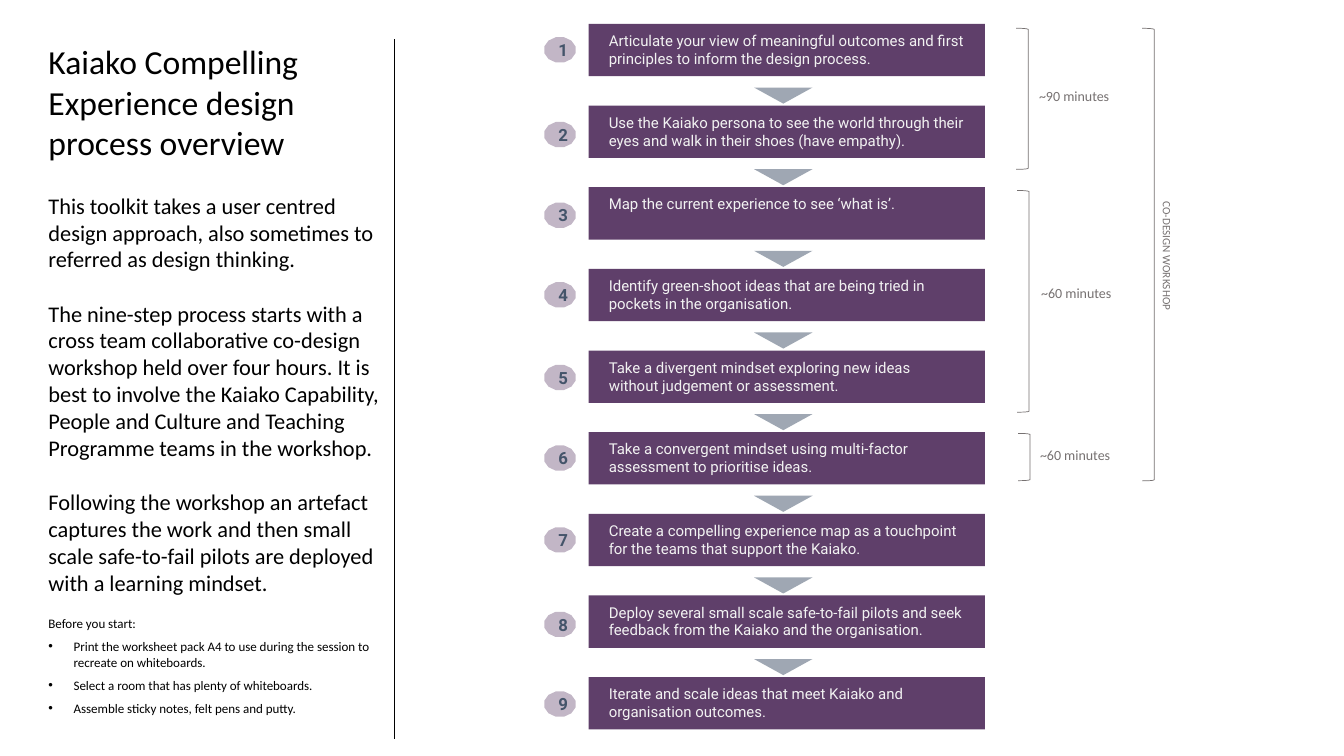
from dataclasses import dataclass
from typing import Any

from lxml.etree import SubElement
from pptx import Presentation
from pptx.dml.color import RGBColor
from pptx.enum.shapes import MSO_CONNECTOR, MSO_SHAPE as Preset
from pptx.enum.text import MSO_ANCHOR as Anchor, MSO_AUTO_SIZE as AutoSize, PP_ALIGN as Align
from pptx.oxml.ns import qn
from pptx.util import Pt

BLACK = RGBColor(0x00, 0x00, 0x00)
PURPLE = RGBColor(0x30, 0x06, 0x3E)
SLATE = RGBColor(0x44, 0x54, 0x6A)
GREY = RGBColor(0x76, 0x71, 0x71)
PALE = RGBColor(0xF2, 0xF2, 0xF2)

STEP_LEFT, STEP_TOP, STEP_WIDTH, STEP_HEIGHT = 420.5, 17.1, 283, 37.4
STEP_PITCH = 58.32
ARROW_LEFT, ARROW_DROP, ARROW_WIDTH, ARROW_HEIGHT = 538.6, 45.4, 41.8, 11.5
BADGE_LEFT, BADGE_WIDTH, BADGE_HEIGHT = 388.8, 22.3, 18
NO_INSETS = dict(margin_left=0, margin_right=0, margin_top=0, margin_bottom=0)


@dataclass
class Step:
    text: str
    badge_top: float
    right_inset: float = 7


@dataclass
class Bracket:
    left: float
    top: float
    height: float


@dataclass
class Label:
    text: str
    left: float
    top: float
    width: float
    height: float
    size: float = 10
    rotation: float = 0
    align: Align = Align.LEFT


@dataclass
class Paragraph:
    text: str
    size: float = 16
    before: float = 0
    after: float = 0
    bullet: bool = False


STEPS = [
    Step("Articulate your view of meaningful outcomes and first principles to inform the design process.", 26.6),
    Step("Use the Kaiako persona to see the world through their eyes and walk in their shoes (have empathy).", 87.1),
    Step("Map the current experience to see ‘what is’.", 144.7),
    Step("Identify green-shoot ideas that are being tried in pockets in the organisation.", 201.6, 20),
    Step("Take a divergent mindset exploring new ideas without judgement or assessment.", 260.6, 20),
    Step("Take a convergent mindset using multi-factor assessment to prioritise ideas.", 318.2, 20),
    Step("Create a compelling experience map as a touchpoint for the teams that support the Kaiako.", 376.6),
    Step("Deploy several small scale safe-to-fail pilots and seek feedback from the Kaiako and the organisation.", 437),
    Step("Iterate and scale ideas that meet Kaiako and organisation outcomes.", 493.9),
]
BRACKETS = [
    Bracket(725.8, 20.2, 100.8),
    Bracket(726.5, 136.1, 158.4),
    Bracket(727.2, 309.6, 33.8),
    Bracket(815.8, 20.2, 323.3),
]
LABELS = [
    Label("~90 minutes", 735.1, 59, 80.6, 19.4),
    Label("~60 minutes", 736.6, 199.4, 80.6, 19.4),
    Label("~60 minutes", 735.8, 315.4, 82, 19.4),
    Label("CO-DESIGN WORKSHOP", 769, 174.2, 128.9, 17.3, 8, 90, Align.CENTER),
]
INTRODUCTION = [
    Paragraph("This toolkit takes a user centred design approach, also sometimes to referred as "
              "design thinking."),
    Paragraph("The nine-step process starts with a cross team collaborative co-design workshop held "
              "over four hours. It is best to involve the Kaiako Capability, People and Culture and "
              "Teaching Programme teams in the workshop.", before=19.5),
    Paragraph("Following the workshop an artefact captures the work and then small scale "
              "safe-to-fail pilots are deployed with a learning mindset.", before=19.5),
    Paragraph("Before you start:", 9.3, 14, 2.7),
    Paragraph("Print the worksheet pack A4 to use during the session to recreate on whiteboards.",
              9.3, 2.7, 2.7, True),
    Paragraph("Select a room that has plenty of whiteboards.", 9.3, 2.7, 2.7, True),
    Paragraph("Assemble sticky notes, felt pens and putty.", 9.3, 2.7, 2.7, True),
]


def apply_format(target: Any, values: dict[str, Any]) -> None:
    for attribute, value in values.items():
        setattr(target, attribute, value)


def write(paragraph: Any, text: str, color: RGBColor, **font: Any) -> None:
    run = paragraph.add_run()
    run.text = text
    apply_format(run.font, font)
    run.font.color.rgb = color


def add_preset(shapes: Any, preset: Preset, left: float, top: float, width: float, height: float) -> Any:
    shape = shapes.add_shape(preset, Pt(left), Pt(top), Pt(width), Pt(height))
    shape.shadow.inherit = False
    return shape


def fill_translucent(shape: Any, color: RGBColor, opacity: int) -> None:
    shape.fill.solid()
    shape.fill.fore_color.rgb = color
    shape.line.fill.background()
    color_element = shape._element.spPr.find(qn("a:solidFill"))[0]
    SubElement(color_element, qn("a:alpha"), val=str(opacity * 1000))


def add_bullet(paragraph: Any) -> None:
    properties = paragraph._p.get_or_add_pPr()
    properties.set("marL", str(Pt(18)))
    properties.set("indent", str(Pt(-18)))
    SubElement(properties, qn("a:buFont"), typeface="Arial")
    SubElement(properties, qn("a:buChar"), char="•")


def draw_title(title: Any) -> None:
    apply_format(title, dict(left=Pt(34.6), top=Pt(29.5), width=Pt(241.2), height=Pt(88)))
    frame = title.text_frame
    apply_format(frame, dict(NO_INSETS, word_wrap=True, vertical_anchor=Anchor.TOP, auto_size=AutoSize.NONE))
    frame.paragraphs[0].alignment = Align.LEFT
    write(frame.paragraphs[0], "Kaiako Compelling Experience design process overview", BLACK,
          name="Calibri", size=Pt(24))


def draw_introduction(shapes: Any) -> None:
    frame = shapes.add_textbox(Pt(34.6), Pt(137), Pt(241.2), Pt(400)).text_frame
    apply_format(frame, dict(NO_INSETS, word_wrap=True))
    for index, entry in enumerate(INTRODUCTION):
        paragraph = frame.add_paragraph() if index else frame.paragraphs[0]
        if entry.bullet:
            add_bullet(paragraph)
        if index:
            apply_format(paragraph, dict(space_before=Pt(entry.before), space_after=Pt(entry.after)))
        write(paragraph, entry.text, BLACK, name="Calibri", size=Pt(entry.size))


def draw_divider(shapes: Any) -> None:
    divider = shapes.add_connector(MSO_CONNECTOR.STRAIGHT, Pt(281.5), Pt(28.1), Pt(281.5), Pt(527.8))
    divider.line.color.rgb = BLACK
    divider.line.width = Pt(0.75)
    SubElement(divider._element.spPr, qn("a:effectLst"))


def draw_step(shapes: Any, index: int, step: Step) -> None:
    top = STEP_TOP + index * STEP_PITCH
    box = add_preset(shapes, Preset.RECTANGLE, STEP_LEFT, top, STEP_WIDTH, STEP_HEIGHT)
    fill_translucent(box, PURPLE, 77)
    apply_format(box.text_frame, dict(
        word_wrap=True, vertical_anchor=Anchor.TOP, margin_left=Pt(14.4), margin_top=Pt(5.4),
        margin_right=Pt(step.right_inset), margin_bottom=0))
    instruction = box.text_frame.paragraphs[0]
    instruction.alignment = Align.LEFT
    write(instruction, step.text, PALE, name="Roboto", size=Pt(10.7))

    badge = add_preset(shapes, Preset.DODECAGON, BADGE_LEFT, step.badge_top, BADGE_WIDTH, BADGE_HEIGHT)
    fill_translucent(badge, PURPLE, 29)
    apply_format(badge.text_frame, dict(word_wrap=True, vertical_anchor=Anchor.MIDDLE))
    number = badge.text_frame.paragraphs[0]
    number.alignment = Align.CENTER
    write(number, str(index + 1), SLATE, name="Roboto", size=Pt(12), bold=True)

    if index < len(STEPS) - 1:
        arrow = add_preset(shapes, Preset.ISOSCELES_TRIANGLE, ARROW_LEFT, top + ARROW_DROP,
                           ARROW_WIDTH, ARROW_HEIGHT)
        arrow.rotation = 180
        fill_translucent(arrow, SLATE, 51)


def draw_bracket(shapes: Any, bracket: Bracket) -> None:
    shape = add_preset(shapes, Preset.RIGHT_BRACKET, bracket.left, bracket.top, 8.6, bracket.height)
    shape.fill.background()
    shape.line.color.rgb = GREY
    shape.line.width = Pt(0.5)


def draw_label(shapes: Any, label: Label) -> None:
    box = shapes.add_textbox(Pt(label.left), Pt(label.top), Pt(label.width), Pt(label.height))
    box.rotation = label.rotation
    box.text_frame.word_wrap = True
    paragraph = box.text_frame.paragraphs[0]
    paragraph.alignment = label.align
    write(paragraph, label.text, GREY, name="Calibri", size=Pt(label.size))


def main() -> None:
    deck = Presentation()
    apply_format(deck, dict(slide_width=Pt(960), slide_height=Pt(540)))
    shapes = deck.slides.add_slide(deck.slide_layouts.get_by_name("Title Only")).shapes
    draw_title(shapes.title)
    draw_introduction(shapes)
    draw_divider(shapes)
    for index, step in enumerate(STEPS):
        draw_step(shapes, index, step)
    for bracket in BRACKETS:
        draw_bracket(shapes, bracket)
    for label in LABELS:
        draw_label(shapes, label)
    deck.save("out.pptx")


if __name__ == "__main__":
    main()
